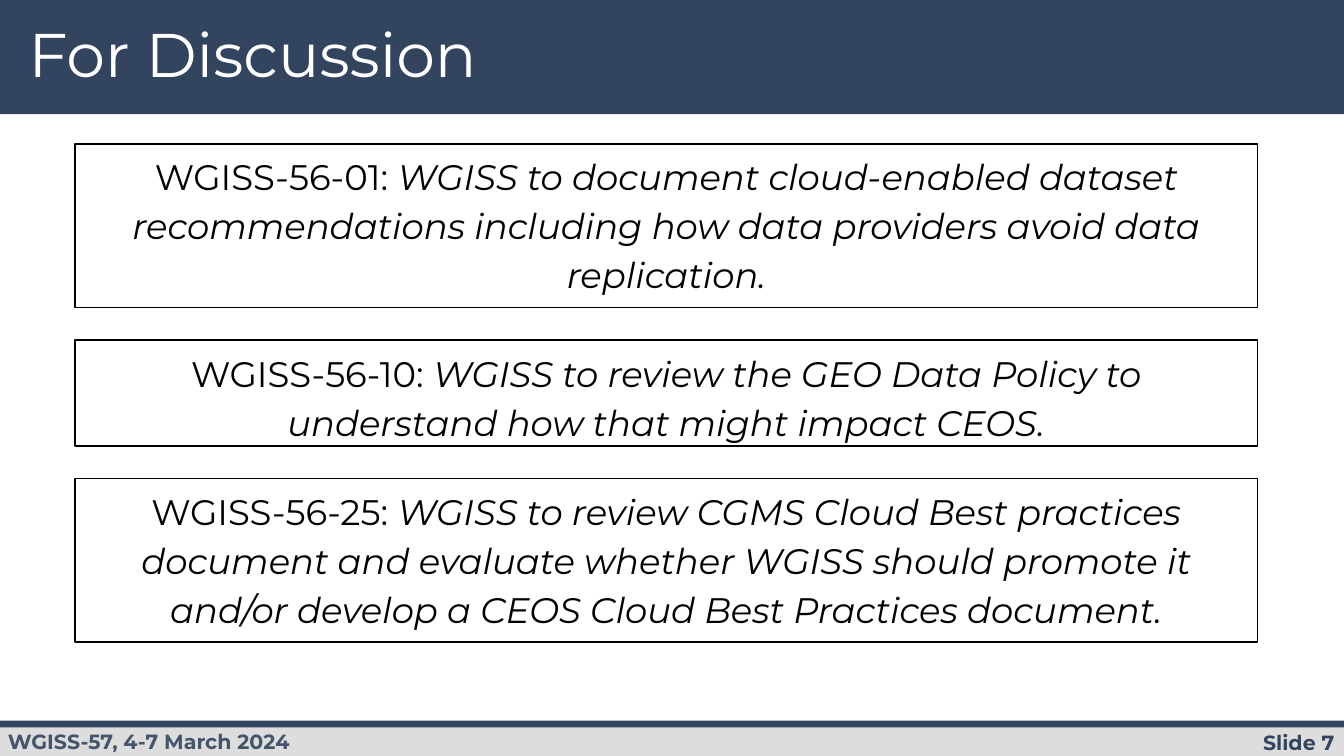
"""Build the discussion slide with three boxed action items."""
from dataclasses import dataclass
from typing import Any

from pptx import Presentation
from pptx.dml.color import RGBColor
from pptx.enum.shapes import MSO_SHAPE as Preset
from pptx.enum.text import MSO_ANCHOR as Anchor, PP_ALIGN as Align
from pptx.util import Cm, Pt


@dataclass(frozen=True)
class Theme:
    """Colours, font and type sizes of the slide."""
    navy: RGBColor = RGBColor(0x33, 0x44, 0x5F)
    slate: RGBColor = RGBColor(0x44, 0x54, 0x6A)
    grey: RGBColor = RGBColor(0xDD, 0xDD, 0xDD)
    white: RGBColor = RGBColor(0xFF, 0xFF, 0xFF)
    black: RGBColor = RGBColor(0, 0, 0)
    font: str = "Montserrat"
    title_size: int = 33
    body_size: int = 19
    footer_size: int = 11


@dataclass(frozen=True)
class Area:
    """A rectangle on the slide, in centimetres."""
    left: float
    top: float
    width: float
    height: float

    def lengths(self) -> list[Cm]:
        """Return the four measures as lengths."""
        return [Cm(value) for value in (self.left, self.top, self.width, self.height)]


@dataclass(frozen=True)
class Band:
    """A filled strip of the page frame."""
    area: Area
    color: RGBColor


@dataclass(frozen=True)
class Footer:
    """A line of footer text."""
    text: str
    area: Area
    color: RGBColor
    align: Align
    margins: tuple[float, float]


@dataclass(frozen=True)
class Action:
    """A numbered action with its wording."""
    code: str
    wording: str
    height: float


THEME = Theme()
WIDTH, HEIGHT = 25.4, 14.29
MARGINS = (0.18, 0.1)
BOX_LEFT, BOX_TOP, BOX_WIDTH, BOX_GAP = 1.42, 2.72, 22.35, 0.61

BANDS = [
    Band(Area(0, 0, WIDTH, 2.16), THEME.navy),
    Band(Area(0, 13.69, WIDTH, 0.6), THEME.grey),
    Band(Area(0, 13.62, WIDTH, 0.13), THEME.navy),
]
FOOTERS = [
    Footer("Slide 7", Area(21.39, 13.69, 4.01, 0.66), THEME.navy, Align.RIGHT, MARGINS),
    Footer("WGISS-57, 4-7 March 2024", Area(-0.1, 13.54, 8.03, 0.99),
           THEME.slate, Align.LEFT, (0.25, 0.25)),
]
ACTIONS = [
    Action("WGISS-56-01:", "WGISS to document cloud-enabled dataset recommendations "
           "including how data providers avoid data replication.", 3.1),
    Action("WGISS-56-10:", "WGISS to review the GEO Data Policy to understand how that "
           "might impact CEOS.", 2),
    Action("WGISS-56-25:", "WGISS to review CGMS Cloud Best practices document and evaluate "
           "whether WGISS should promote it and/or develop a CEOS Cloud Best Practices "
           "document.", 3.1),
]


def apply_format(target: Any, values: dict[str, Any]) -> None:
    """Set each named attribute of the target."""
    for name, value in values.items():
        setattr(target, name, value)


def format_frame(frame: Any, margins: tuple[float, float] = MARGINS) -> None:
    """Make a text frame wrap from the top with the given margins."""
    side, end = (Cm(margin) for margin in margins)
    apply_format(frame, {
        "word_wrap": True, "vertical_anchor": Anchor.TOP,
        "margin_left": side, "margin_right": side, "margin_top": end, "margin_bottom": end,
    })


def add_run(paragraph: Any, text: str, size: int, color: RGBColor, **style: bool) -> None:
    """Append a run in the theme font."""
    run = paragraph.add_run()
    run.text = text
    apply_format(run.font, {"name": THEME.font, "size": Pt(size), **style})
    run.font.color.rgb = color


def add_rectangle(slide: Any, area: Area) -> Any:
    """Add a rectangle without shadow."""
    shape = slide.shapes.add_shape(Preset.RECTANGLE, *area.lengths())
    shape.shadow.inherit = False
    return shape


def add_band(slide: Any, band: Band) -> None:
    """Draw a filled strip without outline."""
    shape = add_rectangle(slide, band.area)
    shape.fill.solid()
    shape.fill.fore_color.rgb = band.color
    shape.line.fill.background()


def add_footer(slide: Any, footer: Footer) -> None:
    """Draw a bold footer text."""
    frame = slide.shapes.add_textbox(*footer.area.lengths()).text_frame
    format_frame(frame, footer.margins)
    paragraph = frame.paragraphs[0]
    paragraph.alignment = footer.align
    add_run(paragraph, footer.text, THEME.footer_size, footer.color, bold=True)


def place_title(slide: Any, text: str) -> None:
    """Format the title placeholder and bring it in front of the header band."""
    title = slide.shapes.title
    area = Area(0.36, 0.36, 19.56, 1.63)
    apply_format(title, dict(zip(("left", "top", "width", "height"), area.lengths())))
    format_frame(title.text_frame)
    paragraph = title.text_frame.paragraphs[0]
    apply_format(paragraph, {"alignment": Align.LEFT, "line_spacing": 0.9})
    add_run(paragraph, text, THEME.title_size, THEME.white)
    slide.shapes._spTree.append(title._element)


def add_action(slide: Any, action: Action, top: float) -> None:
    """Draw an outlined box with an action."""
    shape = add_rectangle(slide, Area(BOX_LEFT, top, BOX_WIDTH, action.height))
    shape.fill.background()
    shape.line.color.rgb = THEME.black
    shape.line.width = Pt(0.75)
    format_frame(shape.text_frame)
    paragraph = shape.text_frame.paragraphs[0]
    apply_format(paragraph, {"alignment": Align.CENTER, "line_spacing": 1.15})
    add_run(paragraph, f"{action.code} ", THEME.body_size, THEME.black)
    add_run(paragraph, action.wording, THEME.body_size, THEME.black, italic=True)


def main() -> None:
    """Build and save the presentation."""
    presentation = Presentation()
    apply_format(presentation, {"slide_width": Cm(WIDTH), "slide_height": Cm(HEIGHT)})
    slide = presentation.slides.add_slide(presentation.slide_layouts.get_by_name("Title Only"))
    for band in BANDS:
        add_band(slide, band)
    for footer in FOOTERS:
        add_footer(slide, footer)
    place_title(slide, "For Discussion")
    top = BOX_TOP
    for action in ACTIONS:
        add_action(slide, action, top)
        top += action.height + BOX_GAP
    presentation.save("out.pptx")


if __name__ == "__main__":
    main()
